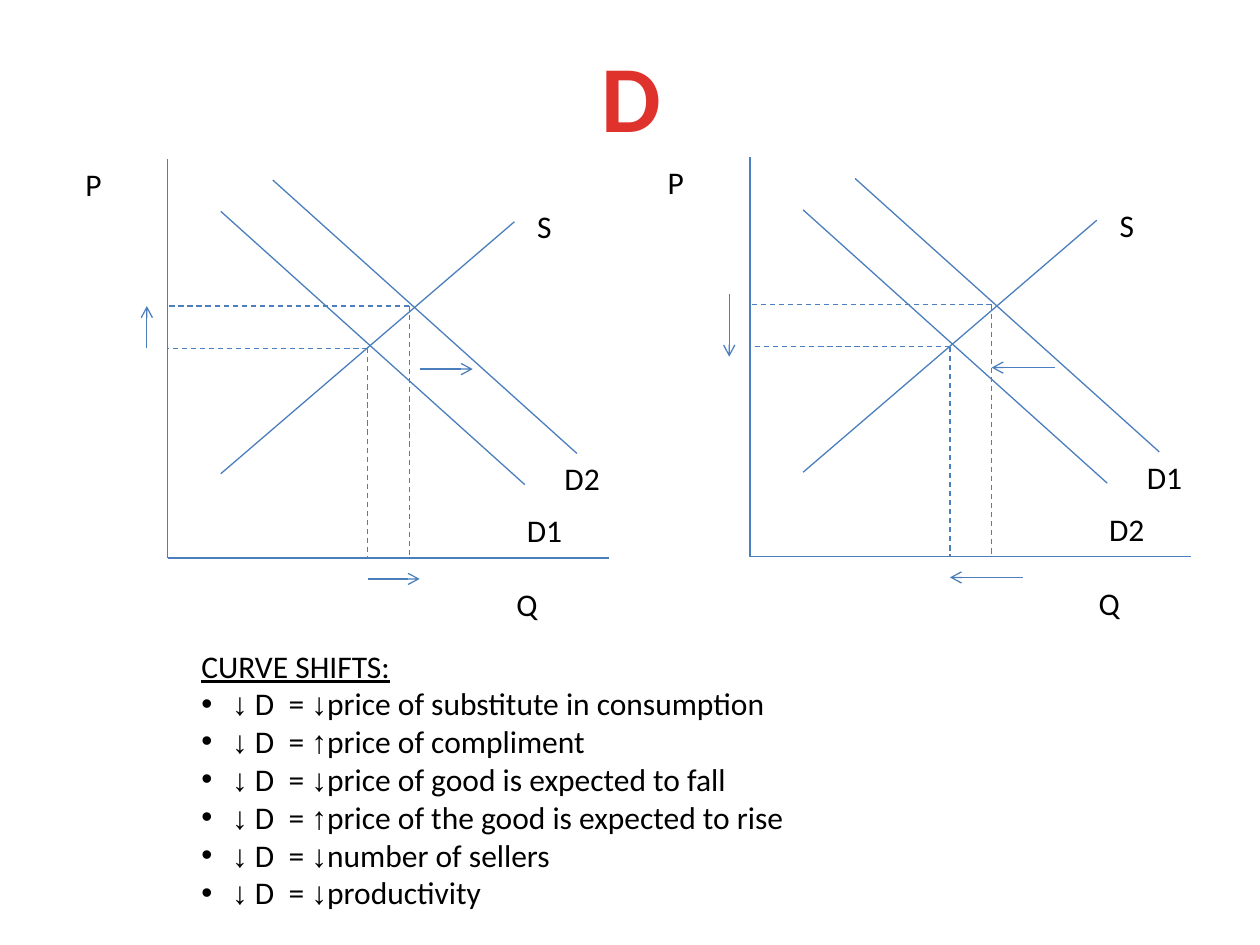
from lxml import etree
from pptx import Presentation
from pptx.dml.color import RGBColor
from pptx.enum.dml import MSO_LINE
from pptx.enum.shapes import MSO_CONNECTOR
from pptx.enum.text import MSO_ANCHOR, PP_ALIGN
from pptx.oxml.ns import qn
from pptx.util import Cm, Pt

STRAIGHT = MSO_CONNECTOR.STRAIGHT
DASH = MSO_LINE.DASH
TOP = MSO_ANCHOR.TOP
CENTER = PP_ALIGN.CENTER

COLORS = {"line": "4B7EBC", "text": "000000", "title": "E0322D"}
FONT, SYMBOL_FONT = "Calibri", "Arial"
BULLET_INDENT = Cm(0.62)

AXIS_WIDTH, AXIS_HEIGHT = 8.89, 8.05
INNER_DEMAND = ((1.07, 6.99), (7.2, 1.48))
OUTER_DEMAND = ((2.12, 7.62), (8.25, 2.11))
SUPPLY = ((1.07, 1.7), (6.99, 6.78))
EQUILIBRIA = [(4.03, 4.23), (4.87, 5.08)]

GRAPHS = [
    {
        "origin": (3.38, 11.25),
        "demand": ("D1", "D2"),
        "arrows": [
            ((5.08, 3.81), (6.15, 3.81)),
            ((-0.42, 4.23), (-0.42, 5.08)),
            ((4.03, -0.42), (5.08, -0.42)),
        ],
    },
    {
        "origin": (15.12, 11.22),
        "demand": ("D2", "D1"),
        "arrows": [
            ((6.15, 3.81), (4.87, 3.81)),
            ((-0.42, 5.3), (-0.42, 4.03)),
            ((5.5, -0.42), (4.03, -0.42)),
        ],
    },
]

SHIFTS = [
    ("↓", "price of substitute in consumption"),
    ("↑", "price of compliment"),
    ("↓", "price of good is expected to fall"),
    ("↑", "price of the good is expected to rise"),
    ("↓", "number of sellers"),
    ("↓", "productivity"),
]


def add_run(p, text, size=18, font=FONT, color="text"):
    """Append a formatted run to a paragraph."""
    r = p.add_run()
    r.text = text
    r.font.size = Pt(size)
    r.font.name = font
    r.font.color.rgb = RGBColor.from_string(COLORS[color])
    return r


def add_box(s, x, y, w, h):
    """Add an unwrapped text box and return its text frame."""
    tf = s.shapes.add_textbox(Cm(x), Cm(y), Cm(w), Cm(h)).text_frame
    tf.word_wrap = False
    return tf


def add_title(s, text):
    """Place the slide title above the graphs."""
    sp = s.shapes.title
    sp.left, sp.top, sp.width, sp.height = Cm(11.86), Cm(0.64), Cm(1.75), Cm(2.57)
    tf = sp.text_frame
    tf.word_wrap = False
    tf.vertical_anchor = TOP
    p = tf.paragraphs[0]
    p.alignment = CENTER
    add_run(p, text, 54, color="title").font.bold = True


def add_line(s, origin, start, end, dashed=False, arrow=False):
    """Draw a line between two points measured right and up from the origin."""
    x, y = origin
    line = s.shapes.add_connector(
        STRAIGHT,
        Cm(x + start[0]), Cm(y - start[1]),
        Cm(x + end[0]), Cm(y - end[1]),
    )
    line.line.width = Pt(0.75)
    line.line.color.rgb = RGBColor.from_string(COLORS["line"])
    if dashed:
        line.line.dash_style = DASH
    if arrow:
        ln = line.line._get_or_add_ln()
        etree.SubElement(ln, qn("a:tailEnd"), type="arrow")
    etree.SubElement(line._element.spPr, qn("a:effectLst"))


def add_graph(s, origin, demand, arrows):
    """Draw one supply and demand graph with its shift arrows."""
    for end in ((0, AXIS_HEIGHT), (AXIS_WIDTH, 0)):
        add_line(s, origin, (0, 0), end)
    for start, end in (INNER_DEMAND, OUTER_DEMAND, SUPPLY):
        add_line(s, origin, start, end)
    for quantity, price in EQUILIBRIA:
        for end in ((0, price), (quantity, 0)):
            add_line(s, origin, (quantity, price), end, dashed=True)
    for start, end in arrows:
        add_line(s, origin, start, end, arrow=True)
    inner, outer = demand
    labels = [
        (inner, 6.99, 1.07, 1.24),
        (outer, 7.75, 2.12, 1.24),
        ("S", 7.2, 7.2, 0.81),
        ("P", -1.91, AXIS_HEIGHT, 0.84),
        ("Q", 6.78, -0.42, 0.94),
    ]
    for text, dx, dy, w in labels:
        tf = add_box(s, origin[0] + dx, origin[1] - dy, w, 1.02)
        add_run(tf.paragraphs[0], text)


def add_bullet(p):
    """Give a paragraph a round bullet with a hanging indent."""
    pPr = p._p.get_or_add_pPr()
    pPr.set("marL", str(BULLET_INDENT))
    pPr.set("indent", str(-BULLET_INDENT))
    etree.SubElement(pPr, qn("a:buFont"), typeface=SYMBOL_FONT)
    etree.SubElement(pPr, qn("a:buChar"), char="•")


def add_shift_list(s):
    """Write the list of causes of a demand shift."""
    tf = add_box(s, 3.81, 12.91, 12.4, 5.64)
    add_run(tf.paragraphs[0], "CURVE SHIFTS:").font.underline = True
    for direction, cause in SHIFTS:
        p = tf.add_paragraph()
        add_bullet(p)
        add_run(p, "↓", font=SYMBOL_FONT)
        add_run(p, " D  = ")
        add_run(p, direction, font=SYMBOL_FONT)
        add_run(p, cause)


def main():
    """Build and save the slide."""
    prs = Presentation()
    prs.slide_width, prs.slide_height = Cm(25.4), Cm(19.05)
    s = prs.slides.add_slide(prs.slide_layouts[5])
    add_title(s, "D")
    for graph in GRAPHS:
        add_graph(s, **graph)
    add_shift_list(s)
    prs.save("out.pptx")


if __name__ == "__main__":
    main()
